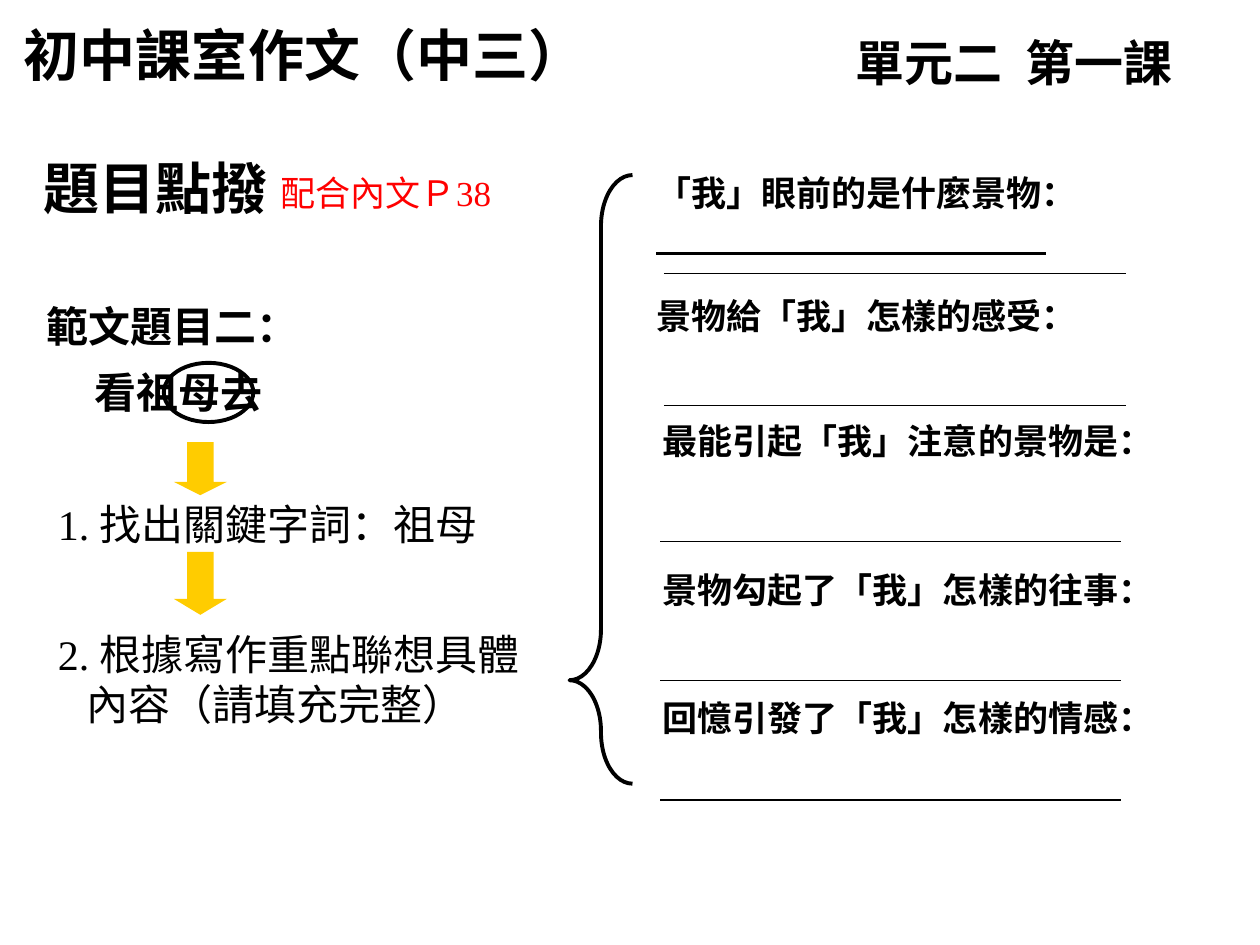
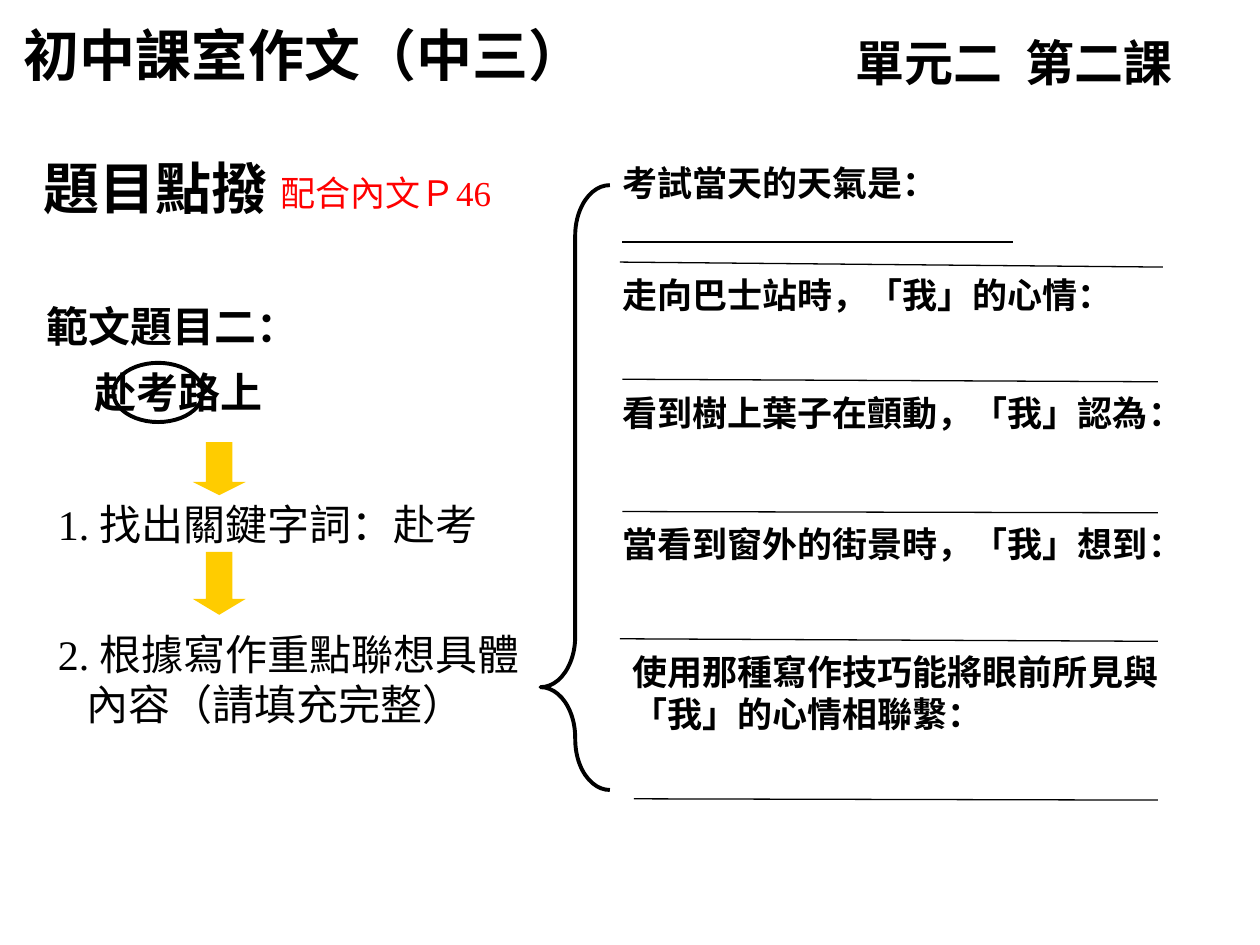
"""Build two essay-writing lesson slides with questions and answer lines."""
from lxml.etree import SubElement
from pptx import Presentation
from pptx.dml.color import RGBColor
from pptx.enum.shapes import MSO_CONNECTOR as CONN, MSO_SHAPE as SHAPE
from pptx.enum.text import MSO_ANCHOR as ANCHOR, MSO_AUTO_SIZE as FIT, PP_ALIGN as ALIGN
from pptx.oxml.ns import qn
from pptx.util import Inches, Pt

BLACK = RGBColor(0x00, 0x00, 0x00)
RED = RGBColor(0xFF, 0x00, 0x00)
GOLD = RGBColor(0xFF, 0xCC, 0x00)
SANS, SERIF, HEAD, TOPIC = "DejaVu Sans", "Times New Roman", "Lato", "Arial"

LESSONS = [
    dict(
        lesson="第一課", page="38", essay="看祖母去", keyword="祖母",
        circle_x=13, arrow_x=13.8, brace=(45.2, 13.9, 5, 48.3), brace_curve=0.81,
        questions=[
            (51.1, 13.1, 41.4, "「我」眼前的是什麼景物："),
            (51.1, 22.9, 35.8, "景物給「我」怎樣的感受："),
            (51.6, 32.8, 43.8, "最能引起「我」注意的景物是："),
            (51.6, 44.6, 43.8, "景物勾起了「我」怎樣的往事："),
            (51.6, 54.8, 43.8, "回憶引發了「我」怎樣的情感："),
        ],
        rules=[
            (52.1, 20.1, 83, 20.1, 1.5),
            (52.7, 21.7, 89.4, 21.7, 0.75),
            (52.7, 32.2, 89.4, 32.2, 0.75),
            (52.4, 43, 89, 43, 0.75),
            (52.4, 54, 89, 54, 0.75),
            (52.4, 63.5, 89, 63.5, 0.75),
        ],
    ),
    dict(
        lesson="第二課", page="46", essay="赴考路上", keyword="赴考",
        circle_x=9, arrow_x=15.3, brace=(42.9, 14.7, 5.5, 48), brace_curve=0.73,
        questions=[
            (48.4, 12.3, 35, "考試當天的天氣是："),
            (48.4, 21.2, 41.7, "走向巴士站時，「我」的心情："),
            (48.4, 30.6, 45.7, "看到樹上葉子在顫動，「我」認為："),
            (48.4, 41, 45.7, "當看到窗外的街景時，「我」想到："),
            (49.2, 51.1, 44.1, "使用那種寫作技巧能將眼前所見與「我」的心情相聯繫："),
        ],
        rules=[
            (49.4, 19.2, 80.4, 19.2, 1.5),
            (49.2, 20.8, 92.3, 21.2, 0.75),
            (49.4, 30.1, 91.9, 30.3, 0.75),
            (49.4, 40.6, 91.9, 40.7, 0.75),
            (49.2, 50.7, 91.9, 50.9, 0.75),
            (50.3, 63.4, 91.9, 63.5, 0.75),
        ],
    ),
]

prs = Presentation()
prs.slide_width, prs.slide_height = Inches(10), Inches(7.5)
COL, ROW = prs.slide_width / 100, prs.slide_height / 75


def cells(x, y, w, h):
    return int(x * COL), int(y * ROW), int(w * COL), int(h * ROW)


def add_run(p, text, size, font, bold=False, color=BLACK):
    r = p.add_run()
    r.text = text
    r.font.size, r.font.name, r.font.bold = Pt(size), font, bold
    r.font.color.rgb = color


for d in LESSONS:
    s = prs.slides.add_slide(prs.slide_layouts[1])

    title, steps = s.shapes.title, s.placeholders[1]
    for ph, area in ((title, (0.9, 1.1, 52.2, 6.3)), (steps, (3.6, 39.1, 41.7, 19.2))):
        ph.left, ph.top, ph.width, ph.height = cells(*area)
        ph.text_frame.auto_size = FIT.NONE
        ph.text_frame.vertical_anchor = ANCHOR.TOP
    p = title.text_frame.paragraphs[0]
    p.alignment = ALIGN.LEFT
    add_run(p, "初中課室作文（中三）", 32, HEAD, True)

    tf = steps.text_frame
    items = ["找出關鍵字詞：" + d["keyword"], "根據寫作重點聯想具體內容（請填充完整）"]
    for i, item in enumerate(items):
        p = tf.add_paragraph() if i else tf.paragraphs[0]
        pPr = p._p.get_or_add_pPr()
        pPr.set("marL", str(int(2.3 * COL)))
        pPr.set("indent", str(int(-2.3 * COL)))
        SubElement(pPr, qn("a:buNone"))
        p.space_before = Pt(45 * i)
        add_run(p, f"{i + 1}. ", 24, SERIF)
        add_run(p, item, 24, SANS)

    texts = [
        (2.5, 11.7, 30.8, 6.3, "題目點撥", 32, TOPIC, True, BLACK),
        (21.3, 13.1, 24.7, 4.3, "配合內文Ｐ" + d["page"], 20, SERIF, False, RED),
        (66.9, 2.1, 33.1, 5.7, "單元二\t" + d["lesson"], 28, HEAD, True, BLACK),
        (2.7, 22.2, 50, 11.4, "範文題目二：", 24, SANS, True, BLACK),
    ]
    for x, y, w, question in d["questions"]:
        texts.append((x, y, w, 4.3, question, 20, SANS, True, BLACK))
    for x, y, w, h, text, size, font, bold, color in texts:
        tf = s.shapes.add_textbox(*cells(x, y, w, h)).text_frame
        tf.word_wrap = True
        p = tf.paragraphs[0]
        if "\t" in text:
            tabs = SubElement(p._p.get_or_add_pPr(), qn("a:tabLst"))
            SubElement(tabs, qn("a:tab"), pos=str(int(13.5 * COL)), algn="l")
        add_run(p, text, size, font, bold, color)
        if text == "範文題目二：":
            p.line_spacing = 1.3
            p = tf.add_paragraph()
            p._p.get_or_add_pPr().set("marL", str(int(3.8 * COL)))
            p.line_spacing = 1.3
            add_run(p, d["essay"], size, font, bold, color)

    for y, h, head in ((35.1, 4.2, 0.25), (43.8, 5, 0.3)):
        arrow = s.shapes.add_shape(SHAPE.DOWN_ARROW, *cells(d["arrow_x"], y, 4.2, h))
        arrow.adjustments[0], arrow.adjustments[1] = 0.5, head
        arrow.shadow.inherit = False
        arrow.fill.solid()
        arrow.fill.fore_color.rgb = GOLD
        arrow.line.fill.background()

    circle = s.shapes.add_shape(SHAPE.OVAL, *cells(d["circle_x"], 28.8, 7.1, 4.7))
    brace = s.shapes.add_shape(SHAPE.LEFT_BRACE, *cells(*d["brace"]))
    brace.adjustments[0], brace.adjustments[1] = d["brace_curve"], 0.83
    for sp in (circle, brace):
        sp.shadow.inherit = False
        sp.fill.background()
        sp.line.color.rgb = BLACK
        sp.line.width = Pt(2.25)

    for x1, y1, x2, y2, weight in d["rules"]:
        rule = s.shapes.add_connector(CONN.STRAIGHT, *cells(x1, y1, x2, y2))
        rule.line.color.rgb = BLACK
        rule.line.width = Pt(weight)
        SubElement(rule._element.spPr, qn("a:effectLst"))

prs.save("out.pptx")
